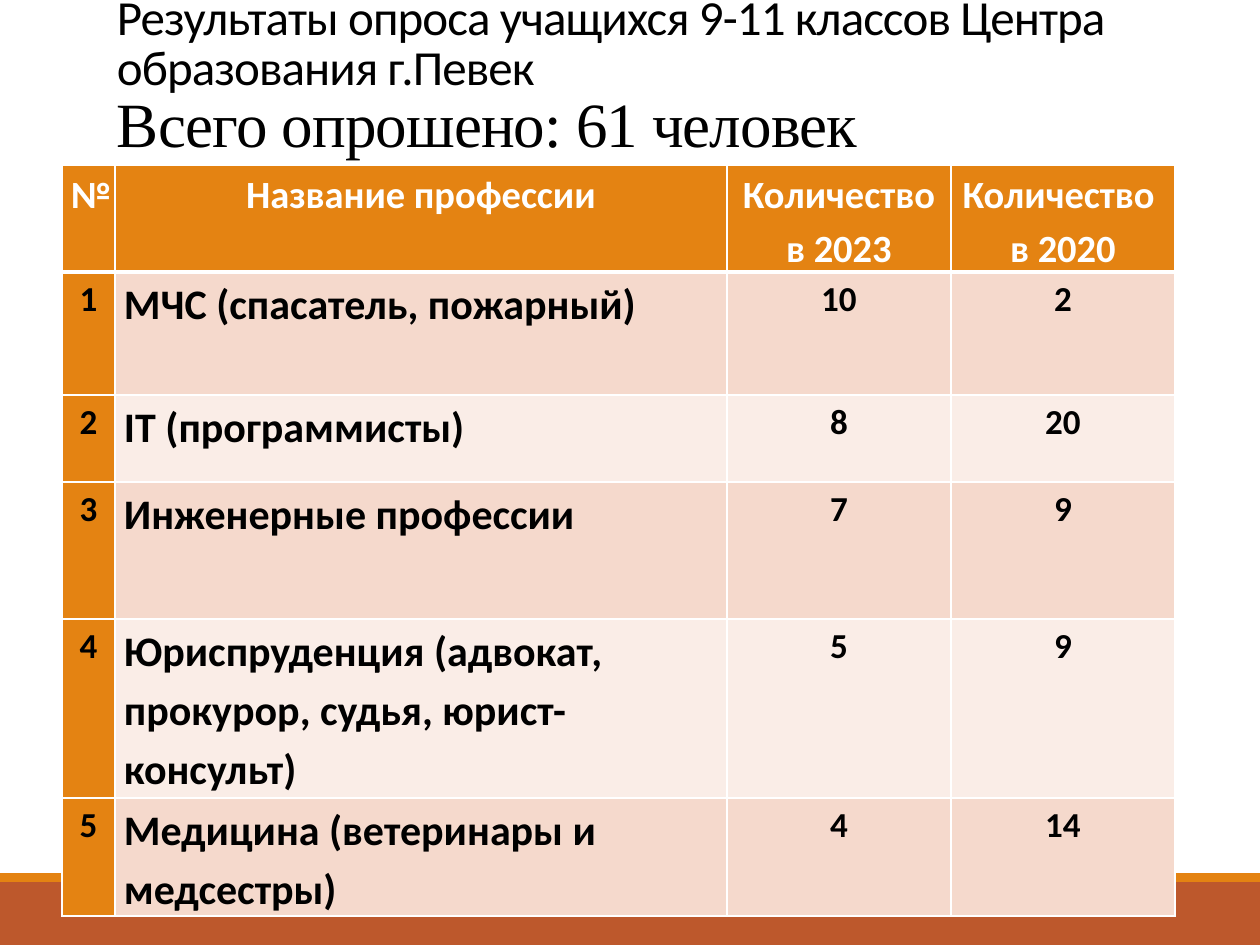
from lxml.etree import SubElement
from pptx import Presentation
from pptx.dml.color import RGBColor
from pptx.enum.shapes import MSO_SHAPE as SHAPE
from pptx.enum.text import MSO_ANCHOR as ANCHOR, PP_ALIGN as ALIGN
from pptx.oxml.ns import qn
from pptx.util import Emu, Pt

COLORS = {"brown": "BD582C", "orange": "E48312", "odd": "F5D9CC",
          "even": "FAEDE7", "white": "FFFFFF", "black": "000000"}
TITLE = [
    ("Результаты опроса учащихся 9-11 классов Центра образования г.Певек", "Calibri", 28),
    ("Всего опрошено: 61 человек", "Times New Roman", 36),
]
ROWS = [
    ("№", "Название профессии", "Количество\nв 2023", "Количество \nв 2020"),
    ("1", "МЧС (спасатель, пожарный)", "10", "2"),
    ("2", "IT (программисты)", "8", "20"),
    ("3", "Инженерные профессии", "7", "9"),
    ("4", "Юриспруденция (адвокат, прокурор, судья, юрист-консульт)", "5", "9"),
    ("5", "Медицина (ветеринары и медсестры)", "4", "14"),
]
COL_WIDTHS = [53, 612, 224, 224]
ROW_HEIGHTS = [107, 123, 87, 137, 179, 118]
BARS = [("brown", 882, 63), ("orange", 873, 9)]
WIDTH, HEIGHT = 1260, 945
TABLE_LEFT, TABLE_TOP = 62, 165


def px(n):
    return Emu(round(n * 914400 / 126))


def rgb(name):
    return RGBColor.from_string(COLORS[name])


def set_attrs(obj, values):
    for name, value in values.items():
        setattr(obj, name, value)


def add_run(p, text, font, size, color, bold=False):
    r = p.add_run()
    r.text = text
    set_attrs(r.font, {"name": font, "size": Pt(size), "bold": bold})
    r.font.color.rgb = rgb(color)
    return r


def add_border(cell, side, width):
    ln = SubElement(cell._tc.get_or_add_tcPr(), qn(f"a:{side}"), w=str(Pt(width)))
    fill = SubElement(ln, qn("a:solidFill"))
    SubElement(fill, qn("a:srgbClr"), val=COLORS["white"])


def fill_cell(cell, text, row, col):
    header = row == 0
    size = 22 if header else 24 if col == 1 else 20
    align = ALIGN.LEFT if col == 1 and not header else ALIGN.CENTER
    set_attrs(cell, {"margin_left": px(9), "margin_right": px(9),
                     "margin_top": 0, "margin_bottom": 0})
    tf = cell.text_frame
    for i, line in enumerate(text.split("\n")):
        p = tf.paragraphs[0] if i == 0 else tf.add_paragraph()
        set_attrs(p, {"alignment": align, "line_spacing": 1.15})
        add_run(p, line, "Calibri", size, "white" if header else "black", True)
    for side in ("lnL", "lnR", "lnT", "lnB"):
        thick = (header and side == "lnB") or (row == 1 and side == "lnT")
        add_border(cell, side, 3 if thick else 1)
    cell.fill.solid()
    shade = "odd" if row % 2 else "even"
    cell.fill.fore_color.rgb = rgb("orange" if header or col == 0 else shade)


def add_bars(s):
    for color, top, height in BARS:
        sp = s.shapes.add_shape(SHAPE.RECTANGLE, 0, px(top), px(WIDTH), px(height))
        sp.shadow.inherit = False
        sp.fill.solid()
        sp.fill.fore_color.rgb = rgb(color)
        sp.line.fill.background()


def add_title(s):
    tf = s.shapes.add_textbox(px(117), px(-4), px(1046), px(165)).text_frame
    set_attrs(tf, {"word_wrap": True, "vertical_anchor": ANCHOR.TOP,
                   "margin_left": 0, "margin_right": 0,
                   "margin_top": 0, "margin_bottom": 0})
    for i, (text, font, size) in enumerate(TITLE):
        p = tf.paragraphs[0] if i == 0 else tf.add_paragraph()
        p.line_spacing = 0.85
        r = add_run(p, text, font, size, "black")
        r._r.get_or_add_rPr().set("spc", "-50")


def add_survey_table(s):
    table = s.shapes.add_table(len(ROWS), len(COL_WIDTHS), px(TABLE_LEFT), px(TABLE_TOP),
                               px(sum(COL_WIDTHS)), px(sum(ROW_HEIGHTS))).table
    set_attrs(table, {"first_row": False, "horz_banding": False})
    for column, width in zip(table.columns, COL_WIDTHS):
        column.width = px(width)
    for i, (values, height) in enumerate(zip(ROWS, ROW_HEIGHTS)):
        table.rows[i].height = px(height)
        for j, text in enumerate(values):
            fill_cell(table.cell(i, j), text, i, j)


def main():
    prs = Presentation()
    set_attrs(prs, {"slide_width": px(WIDTH), "slide_height": px(HEIGHT)})
    s = prs.slides.add_slide(prs.slide_layouts[6])
    add_bars(s)
    add_title(s)
    add_survey_table(s)
    prs.save("out.pptx")


if __name__ == "__main__":
    main()
